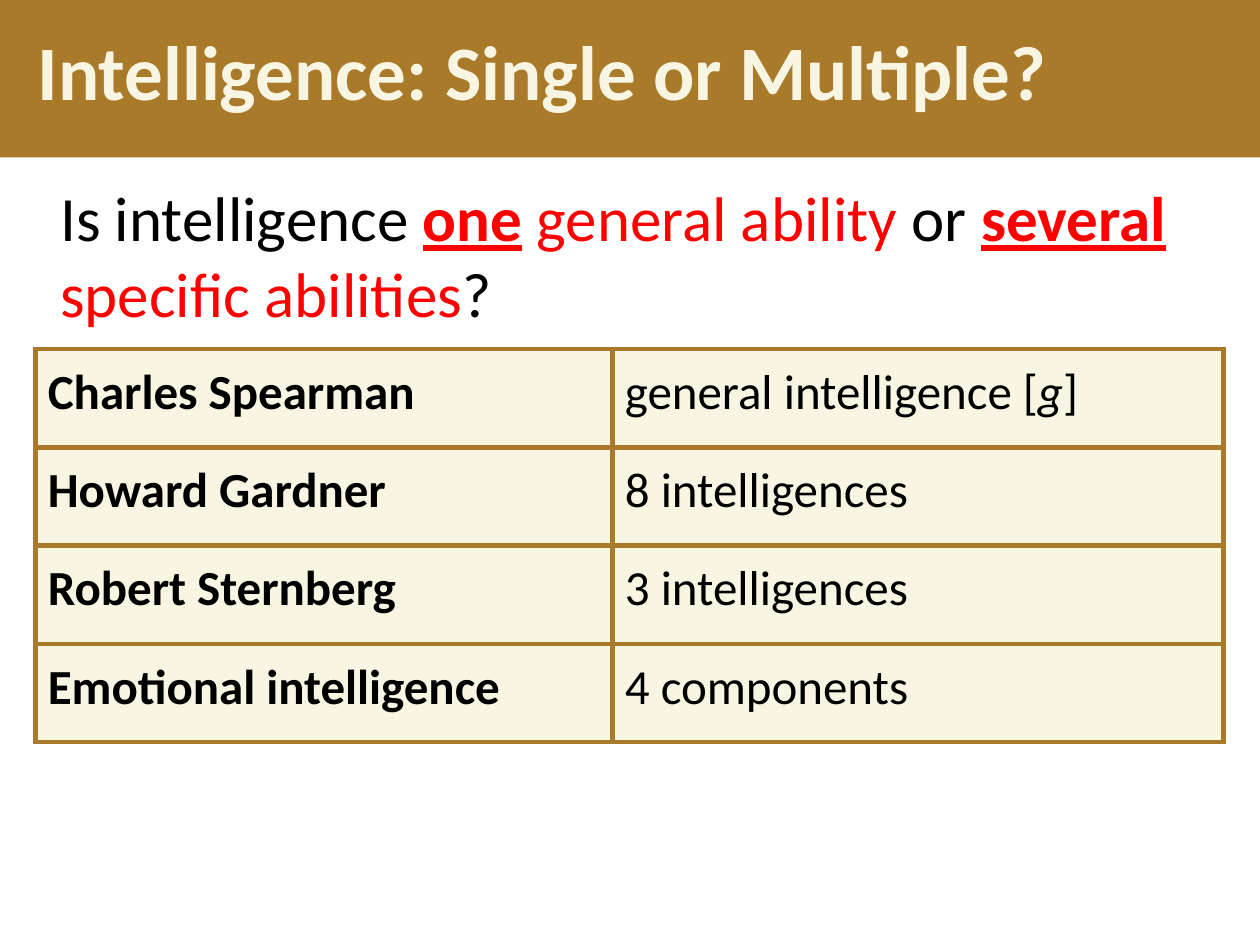
"""Build the slide that asks whether intelligence is single or multiple."""
from dataclasses import dataclass

from lxml import etree
from pptx import Presentation
from pptx.dml.color import RGBColor
from pptx.enum.shapes import MSO_SHAPE
from pptx.enum.text import MSO_ANCHOR, PP_ALIGN
from pptx.oxml.ns import qn
from pptx.util import Inches, Pt

RECTANGLE = MSO_SHAPE.RECTANGLE
MIDDLE, TOP = MSO_ANCHOR.MIDDLE, MSO_ANCHOR.TOP
LEFT = PP_ALIGN.LEFT


@dataclass(frozen=True)
class Theme:
    font: str = "Calibri"
    bronze: str = "AA7A2B"
    cream: str = "F8F6E3"
    ink: str = "000000"
    accent: str = "FF0000"
    title_size: int = 44
    question_size: int = 36
    table_size: int = 28
    border: int = 3


THEME = Theme()
WIDTH, HEIGHT = Inches(10), Inches(7.5)

TITLE = [("Intelligence: Single or Multiple?", "b")]
QUESTION = [
    ("Is intelligence ", ""),
    ("one", "bua"),
    (" general ability ", "a"),
    ("or ", ""),
    ("several", "bua"),
    (" specific abilities", "a"),
    ("?", ""),
]
THEORIES = [
    ("Charles Spearman", [("general intelligence [", ""), ("g", "i"), ("]", "")]),
    ("Howard Gardner", [("8 intelligences", "")]),
    ("Robert Sternberg", [("3 intelligences", "")]),
    ("Emotional intelligence", [("4 components", "")]),
]

BANNER_HEIGHT = HEIGHT // 6
QUESTION_BOX = Inches(0.38), Inches(1.37), Inches(9.18), Inches(1.31)
TABLE_LEFT, TABLE_TOP = Inches(0.28), Inches(2.77)
COLUMNS = Inches(4.58), Inches(4.85)
ROW_HEIGHT = Inches(0.78)


def write(frame, runs, *, size, color=THEME.ink, spacing=None, anchor=TOP):
    """Write runs whose marks are b bold, i italic, u underline and a accent colour."""
    frame.word_wrap = True
    frame.vertical_anchor = anchor
    paragraph = frame.paragraphs[0]
    paragraph.alignment = LEFT
    if spacing:
        paragraph.line_spacing = Pt(spacing)
    for text, marks in runs:
        run = paragraph.add_run()
        run.text = text
        font = run.font
        font.name, font.size = THEME.font, Pt(size)
        font.bold, font.italic, font.underline = (mark in marks for mark in "biu")
        font.color.rgb = RGBColor.from_string(THEME.accent if "a" in marks else color)


def paint(fill, color):
    fill.solid()
    fill.fore_color.rgb = RGBColor.from_string(color)


def outline(cell):
    properties = cell._tc.get_or_add_tcPr()
    for position, side in enumerate(("lnL", "lnR", "lnT", "lnB")):
        line = etree.Element(qn(f"a:{side}"), w=str(Pt(THEME.border)))
        solid = etree.SubElement(line, qn("a:solidFill"))
        etree.SubElement(solid, qn("a:srgbClr"), val=THEME.bronze)
        properties.insert(position, line)


def add_banner(slide):
    banner = slide.shapes.add_shape(RECTANGLE, 0, 0, WIDTH, BANNER_HEIGHT)
    banner.shadow.inherit = False
    paint(banner.fill, THEME.bronze)
    banner.line.fill.background()
    banner.text_frame.margin_left = Inches(0.3)
    write(banner.text_frame, TITLE, size=THEME.title_size, color=THEME.cream,
          spacing=42, anchor=MIDDLE)


def add_theories(slide):
    table = slide.shapes.add_table(
        len(THEORIES), len(COLUMNS), TABLE_LEFT, TABLE_TOP,
        sum(COLUMNS), ROW_HEIGHT * len(THEORIES)).table
    table.first_row = table.horz_banding = False
    for column, width in zip(table.columns, COLUMNS):
        column.width = width
    for row, (theorist, claim) in zip(table.rows, THEORIES):
        row.height = ROW_HEIGHT
        for cell, runs in zip(row.cells, ([(theorist, "b")], claim)):
            paint(cell.fill, THEME.cream)
            outline(cell)
            write(cell.text_frame, runs, size=THEME.table_size, spacing=28)
            cell.vertical_anchor = MIDDLE


def main():
    deck = Presentation()
    deck.slide_width, deck.slide_height = WIDTH, HEIGHT
    slide = deck.slides.add_slide(deck.slide_layouts[6])
    add_banner(slide)
    question = slide.shapes.add_textbox(*QUESTION_BOX)
    write(question.text_frame, QUESTION, size=THEME.question_size)
    add_theories(slide)
    deck.save("out.pptx")


if __name__ == "__main__":
    main()
